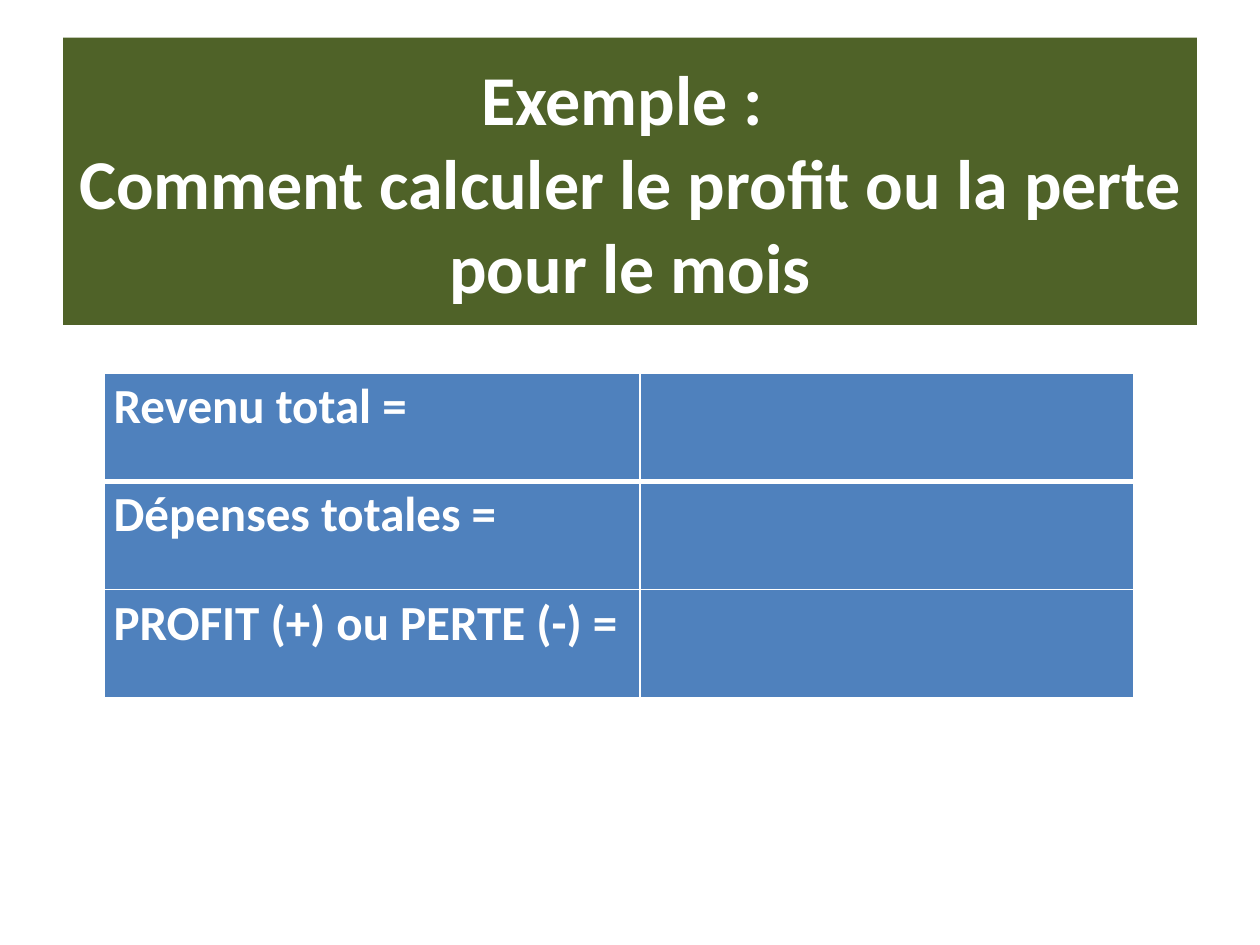
from dataclasses import dataclass

from lxml import etree
from pptx import Presentation
from pptx import util as u
from pptx.dml.color import RGBColor
from pptx.enum import text
from pptx.oxml import ns


@dataclass(frozen=True)
class Theme:
    font: str = "Calibri"
    green: str = "4F6228"
    blue: str = "4F81BD"
    white: str = "FFFFFF"
    head: int = 40
    cell: int = 28
    thin: int = 1
    thick: int = 3


THEME = Theme()
LABELS = ["Revenu total =", "Dépenses totales =", "PROFIT (+) ou PERTE (-) ="]
COLS = [10.79, 9.96]
ROW = 2.18


def paint(item, color):
    item.fill.solid()
    item.fill.fore_color.rgb = RGBColor.from_string(color)


def write(frame, lines, size, align=None, lead=None, gap=None):
    """Fill a text frame with one paragraph per line."""
    for i, line in enumerate(lines):
        para = frame.paragraphs[0] if i == 0 else frame.add_paragraph()
        para.alignment = align
        para.line_spacing = lead
        if gap is not None:
            para.space_before = para.space_after = u.Pt(gap)
        run = para.add_run()
        run.text = line
        font = run.font
        font.name, font.size, font.bold = THEME.font, u.Pt(size), True
        font.color.rgb = RGBColor.from_string(THEME.white)


def edge(cell, side, width):
    """Draw one white border of a table cell."""
    props = cell._tc.get_or_add_tcPr()
    line = etree.SubElement(props, ns.qn(f"a:ln{side}"), w=str(u.Pt(width)))
    fill = etree.SubElement(line, ns.qn("a:solidFill"))
    etree.SubElement(fill, ns.qn("a:srgbClr"), val=THEME.white)


def add_title(slide):
    title = slide.shapes.title
    title.left, title.top = u.Cm(1.27), u.Cm(0.76)
    title.width, title.height = u.Cm(22.86), u.Cm(5.79)
    paint(title, THEME.green)
    frame = title.text_frame
    frame.word_wrap = True
    frame.auto_size = text.MSO_AUTO_SIZE.NONE
    frame.vertical_anchor = text.MSO_ANCHOR.MIDDLE
    write(frame, ["Exemple : ", "Comment calculer le profit ou la perte pour le mois"],
          THEME.head, align=text.PP_ALIGN.CENTER)


def add_grid(slide):
    count = len(LABELS)
    grid = slide.shapes.add_table(count, len(COLS), u.Cm(2.11), u.Cm(7.52),
                                  u.Cm(sum(COLS)), u.Cm(ROW * count)).table
    for col, width in zip(grid.columns, COLS):
        col.width = u.Cm(width)
    for r, label in enumerate(LABELS):
        grid.rows[r].height = u.Cm(ROW)
        for cell in grid.rows[r].cells:
            # The rule under the first row is the heavy one
            heavy = {"B"} if r == 0 else {"T"} if r == 1 else set()
            for side in "LRTB":
                edge(cell, side, THEME.thick if side in heavy else THEME.thin)
            paint(cell, THEME.blue)
            cell.margin_left = cell.margin_right = u.Cm(0.18)
            cell.margin_top = cell.margin_bottom = 0
        write(grid.cell(r, 0).text_frame, [label], THEME.cell, lead=1.07, gap=12)


def main():
    deck = Presentation()
    deck.slide_width, deck.slide_height = u.Cm(25.4), u.Cm(19.05)
    slide = deck.slides.add_slide(deck.slide_layouts[5])
    add_title(slide)
    add_grid(slide)
    deck.save("out.pptx")


if __name__ == "__main__":
    main()
